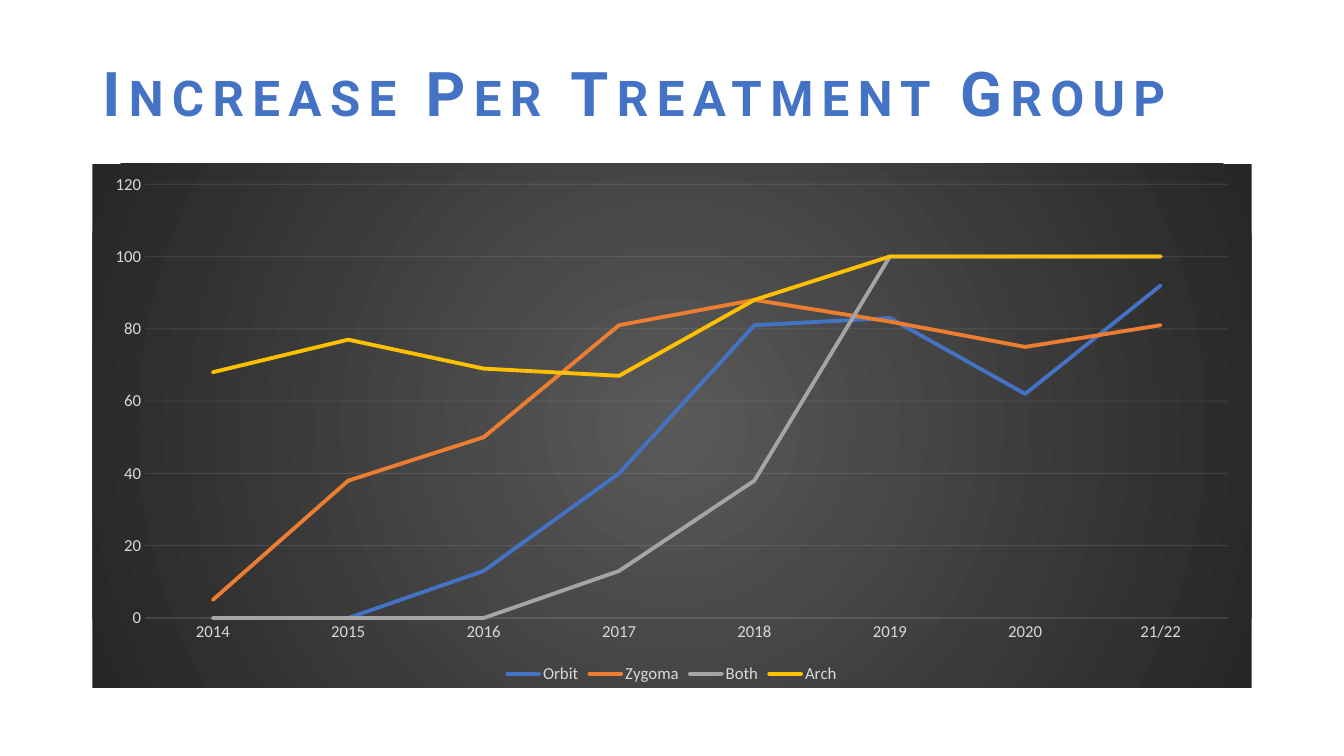
from lxml import etree
from pptx import Presentation
from pptx.chart.data import CategoryChartData
from pptx.dml.color import RGBColor
from pptx.enum.chart import XL_CHART_TYPE, XL_LEGEND_POSITION, XL_TICK_MARK
from pptx.enum.text import MSO_ANCHOR, MSO_AUTO_SIZE, PP_ALIGN
from pptx.oxml import parse_xml
from pptx.oxml.ns import qn
from pptx.util import Emu, Pt

LINE_CHART = XL_CHART_TYPE.LINE
LEGEND_BOTTOM = XL_LEGEND_POSITION.BOTTOM
NO_TICK = XL_TICK_MARK.NONE
CENTER = PP_ALIGN.CENTER
MIDDLE = MSO_ANCHOR.MIDDLE
GROW = MSO_AUTO_SIZE.SHAPE_TO_FIT_TEXT

EMU_PER_PX = 9525
TITLE_ONLY = 5

BLUE = RGBColor(0x44, 0x72, 0xC4)
ORANGE = RGBColor(0xED, 0x7D, 0x31)
GRAY = RGBColor(0xA5, 0xA5, 0xA5)
GOLD = RGBColor(0xFF, 0xC0, 0x00)
LABEL = RGBColor(0xD9, 0xD9, 0xD9)
GRID = RGBColor(0xF2, 0xF2, 0xF2)
PANEL_CENTER = RGBColor(0x59, 0x59, 0x59)
PANEL_EDGE = RGBColor(0x26, 0x26, 0x26)

YEARS = ["2014", "2015", "2016", "2017", "2018", "2019", "2020", "21/22"]
GROUPS = [
    ("Orbit", BLUE, (0, 0, 13, 40, 81, 83, 62, 92)),
    ("Zygoma", ORANGE, (5, 38, 50, 81, 88, 82, 75, 81)),
    ("Both", GRAY, (0, 0, 0, 13, 38, 100, 100, 100)),
    ("Arch", GOLD, (68, 77, 69, 67, 88, 100, 100, 100)),
]

PANEL_XML = f"""
<c:spPr xmlns:c="http://schemas.openxmlformats.org/drawingml/2006/chart"
        xmlns:a="http://schemas.openxmlformats.org/drawingml/2006/main">
  <a:gradFill>
    <a:gsLst>
      <a:gs pos="0"><a:srgbClr val="{PANEL_CENTER}"/></a:gs>
      <a:gs pos="100000"><a:srgbClr val="{PANEL_EDGE}"/></a:gs>
    </a:gsLst>
    <a:path path="circle">
      <a:fillToRect l="50000" t="50000" r="50000" b="50000"/>
    </a:path>
  </a:gradFill>
  <a:ln><a:noFill/></a:ln>
</c:spPr>"""


def px(length):
    return Emu(length * EMU_PER_PX)


class SlideBuilder:
    """Holds the fonts and the slide being filled."""

    title_font = "Roboto"
    chart_font = "Calibri"

    def __init__(self, slide):
        self.slide = slide

    def title(self, text, left, top, width, height):
        heading = self.slide.shapes.title
        heading.left, heading.top = px(left), px(top)
        heading.width, heading.height = px(width), px(height)
        frame = heading.text_frame
        frame.word_wrap = True
        frame.auto_size = GROW
        frame.vertical_anchor = MIDDLE
        paragraph = frame.paragraphs[0]
        paragraph.alignment = CENTER
        run = paragraph.add_run()
        run.text = text
        run.font.name = self.title_font
        run.font.size = Pt(44)
        run.font.bold = True
        run.font.color.rgb = BLUE
        properties = run.font._element if hasattr(run.font, "_element") else run._r.get_or_add_rPr()
        properties.set("cap", "small")
        properties.set("spc", "600")

    def line_chart(self, categories, groups, left, top, width, height):
        data = CategoryChartData()
        data.categories = categories
        for name, _, values in groups:
            data.add_series(name, values)
        chart = self.slide.shapes.add_chart(
            LINE_CHART, px(left), px(top), px(width), px(height), data).chart
        chart.has_title = False
        chart.font.name = self.chart_font
        chart.font.size = Pt(12)
        chart.font.color.rgb = LABEL
        chart.has_legend = True
        chart.legend.position = LEGEND_BOTTOM
        chart.legend.include_in_layout = False
        for series, (_, color, _) in zip(chart.plots[0].series, groups):
            series.smooth = False
            series.format.line.color.rgb = color
            series.format.line.width = Pt(2.75)
        self.style_axes(chart)
        self.style_chart_xml(chart.element)

    def style_axes(self, chart):
        years, percent = chart.category_axis, chart.value_axis
        for axis in (years, percent):
            axis.major_tick_mark = axis.minor_tick_mark = NO_TICK
        percent.minimum_scale, percent.maximum_scale = 0, 120
        percent.major_unit = 20
        percent.has_major_gridlines = True
        percent.format.line.fill.background()
        for line in (years.format.line, percent.major_gridlines.format.line):
            line.color.rgb = GRID
            line.width = Pt(0.75)

    def style_chart_xml(self, chart_space):
        """Add the gradient panel, faint grid lines and round line ends."""
        chart_space.find(qn("c:chart")).addnext(parse_xml(PANEL_XML))
        for color in chart_space.iter(qn("a:srgbClr")):
            if color.get("val") == str(GRID):
                etree.SubElement(color, qn("a:alpha")).set("val", "10000")
        for series in chart_space.iter(qn("c:ser")):
            series.find(qn("c:spPr")).find(qn("a:ln")).set("cap", "rnd")


def main():
    deck = Presentation()
    deck.slide_width, deck.slide_height = px(1280), px(720)
    builder = SlideBuilder(deck.slides.add_slide(deck.slide_layouts[TITLE_ONLY]))
    builder.title("Increase Per Treatment Group", 88, 47, 1104, 81)
    builder.line_chart(YEARS, GROUPS, 88, 156, 1104, 499)
    deck.save("out.pptx")


if __name__ == "__main__":
    main()
